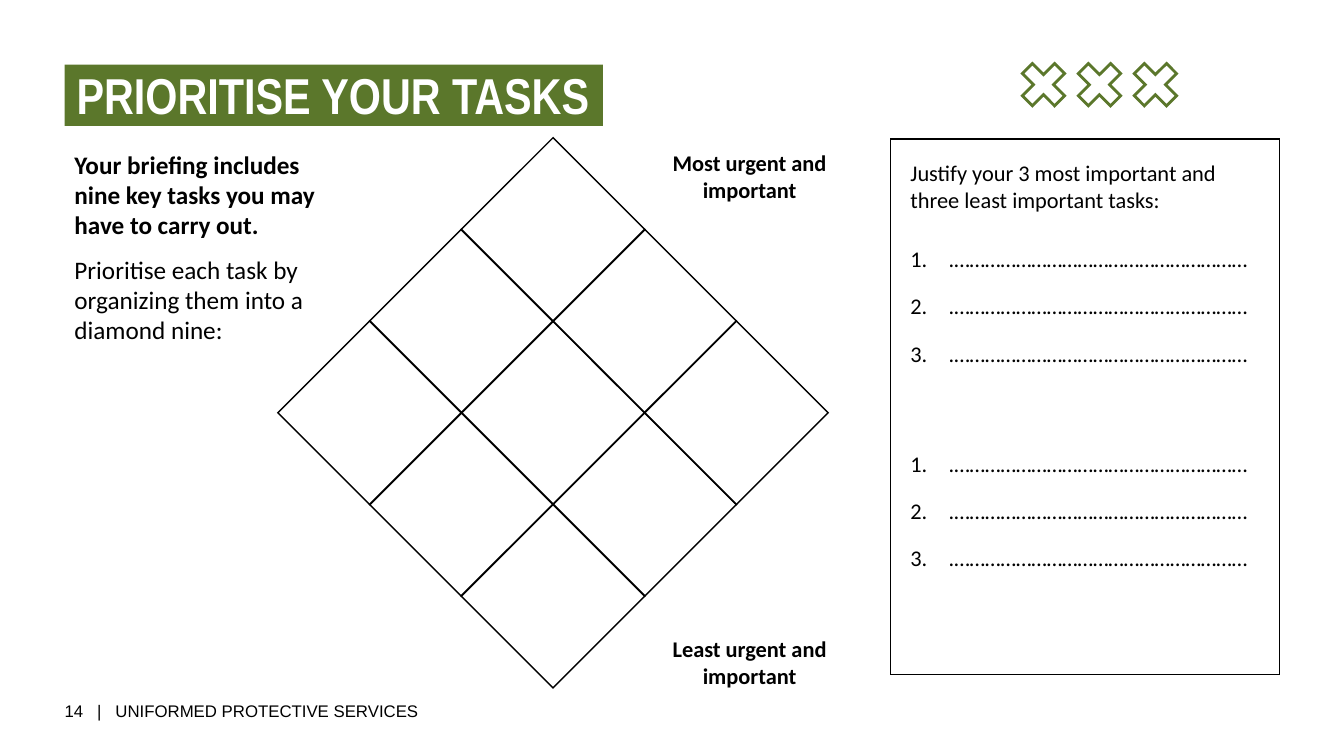
import pptx
import pptx.util
import pptx.dml.color
import pptx.enum.shapes
import pptx.enum.text
import pptx.oxml.ns
import lxml.etree

Inches = pptx.util.Inches
Pt = pptx.util.Pt
ANCHOR = pptx.enum.text.MSO_ANCHOR
ALIGN = pptx.enum.text.PP_ALIGN
RECTANGLE = pptx.enum.shapes.MSO_SHAPE.RECTANGLE

COLOURS = {"green": "5B772B", "black": "000000", "white": "FFFFFF"}
BODY = {"name": "Calibri", "size": Pt(18), "bold": False}
SMALL = BODY | {"size": Pt(16)}
ANSWER_LINE = "." + "…" * 19


def colour(name):
    return pptx.dml.color.RGBColor.from_string(COLOURS[name])


def apply(target, values):
    for key, value in values.items():
        setattr(target, key, value)


def set_frame(frame, insets, wrap=True, anchor=ANCHOR.TOP):
    left, top, right, bottom = map(Inches, insets)
    apply(frame, {
        "margin_left": left, "margin_top": top,
        "margin_right": right, "margin_bottom": bottom,
        "auto_size": pptx.enum.text.MSO_AUTO_SIZE.NONE,
        "word_wrap": wrap, "vertical_anchor": anchor,
    })


def write(frame, entries, paragraph_format, ink="black", numbered=False):
    for index, (text, font) in enumerate(entries):
        paragraph = frame.paragraphs[0] if index == 0 else frame.add_paragraph()
        if numbered:
            properties = paragraph._p.get_or_add_pPr()
            properties.set("marL", str(Inches(0.38)))
            properties.set("indent", str(-Inches(0.38)))
            lxml.etree.SubElement(
                properties, pptx.oxml.ns.qn("a:buAutoNum"), type="arabicPeriod")
        apply(paragraph, {"alignment": ALIGN.LEFT} | paragraph_format)
        run = paragraph.add_run()
        run.text = text
        apply(run.font, font)
        run.font.color.rgb = colour(ink)


def add_text(slide, box, entries, paragraph_format, inset=0.1,
             anchor=ANCHOR.TOP, numbered=False):
    frame = slide.shapes.add_textbox(*map(Inches, box)).text_frame
    set_frame(frame, [inset] * 4, anchor=anchor)
    write(frame, entries, paragraph_format, numbered=numbered)


def outline(shape, ink, width):
    shape.shadow.inherit = False
    shape.fill.background()
    shape.line.color.rgb = colour(ink)
    shape.line.width = Pt(width)
    line = shape._element.spPr.find(pptx.oxml.ns.qn("a:ln"))
    lxml.etree.SubElement(line, pptx.oxml.ns.qn("a:miter"), lim="800000")


def add_heading(slide, box):
    heading = slide.shapes.title
    apply(heading, dict(zip(("left", "top", "width", "height"), map(Inches, box))))
    heading.fill.solid()
    heading.fill.fore_color.rgb = colour("green")
    set_frame(heading.text_frame, (0.12, 0, 0.08, 0), wrap=False)
    write(heading.text_frame, [("PRIORITISE YOUR TASKS", {
        "name": "Arial Narrow", "size": Pt(36), "bold": True})], {}, "white")


def add_crosses(slide, box):
    left, top, width, height = box
    half = height / 2
    step = (width - height) / 2
    arm = [(0.1, 0), (half, 0.11), (0.11, half)]
    points = []
    for _ in range(4):
        points += arm
        arm = [(-y, x) for x, y in arm]
    builder = None
    for number in range(3):
        corners = [(Inches(left + half + number * step + x), Inches(top + half + y))
                   for x, y in points]
        if builder is None:
            builder = slide.shapes.build_freeform(*corners[0])
        else:
            builder.move_to(*corners[0])
        builder.add_line_segments(corners[1:], close=True)
    outline(builder.convert_to_shape(), "green", 2)


def add_briefing(slide, box):
    add_text(slide, box, [
        ("Your briefing includes nine key tasks you may have to carry out.",
         BODY | {"bold": True}),
        ("Prioritise each task by organizing them into a diamond nine:", BODY),
    ], {"space_after": Pt(10)})


def add_diamond_nine(slide, box):
    left, top, width, height = box
    step = width / 6
    side = 1.29
    for row in range(3):
        for column in range(3):
            centre_x = left + width / 2 + (column - row) * step
            centre_y = top + (row + column + 1) * step
            task = slide.shapes.add_shape(
                RECTANGLE, Inches(centre_x - side / 2), Inches(centre_y - side / 2),
                Inches(side), Inches(side))
            task.rotation = 45
            outline(task, "black", 1)


def add_urgency_labels(slide, box):
    left, top, width, height = box
    label_height = 0.74
    for label, label_top in (("Most", top), ("Least", top + height - label_height)):
        add_text(slide, (left, label_top, width, label_height),
                 [(f"{label} urgent and important", SMALL | {"bold": True})],
                 {"alignment": ALIGN.CENTER, "space_after": Pt(10)})


def add_justification(slide, box):
    left, top, width, height = box
    panel = slide.shapes.add_shape(RECTANGLE, *map(Inches, box))
    outline(panel, "black", 1)
    set_frame(panel.text_frame, [0.2] * 4)
    write(panel.text_frame, [
        ("Justify your 3 most important and three least important tasks:", SMALL)],
        {"space_after": Pt(10)})
    for offset in (0.72, 2.75):
        add_text(slide, (left, top + offset, width, 1.71),
                 [(ANSWER_LINE, SMALL)] * 3,
                 {"line_spacing": 1.5, "space_after": Pt(5)},
                 inset=0.2, numbered=True)


def add_footer(slide, box):
    add_text(slide, box, [("14   |   UNIFORMED PROTECTIVE SERVICES",
                           {"name": "Arial", "size": Pt(12)})],
             {}, inset=0, anchor=ANCHOR.MIDDLE)


def main():
    presentation = pptx.Presentation()
    presentation.slide_width = Inches(13.33)
    presentation.slide_height = Inches(7.5)
    slide = presentation.slides.add_slide(presentation.slide_layouts[5])
    add_footer(slide, (0.64, 6.95, 3.82, 0.2))
    add_heading(slide, (0.64, 0.64, 5.34, 0.61))
    add_briefing(slide, (0.64, 1.38, 2.84, 2.16))
    add_crosses(slide, (10.14, 0.63, 1.53, 0.42))
    add_urgency_labels(slide, (6.27, 1.38, 2.33, 5.56))
    add_justification(slide, (8.83, 1.38, 3.86, 5.31))
    add_diamond_nine(slide, (2.76, 1.37, 5.45, 5.45))
    presentation.save("out.pptx")


if __name__ == "__main__":
    main()
